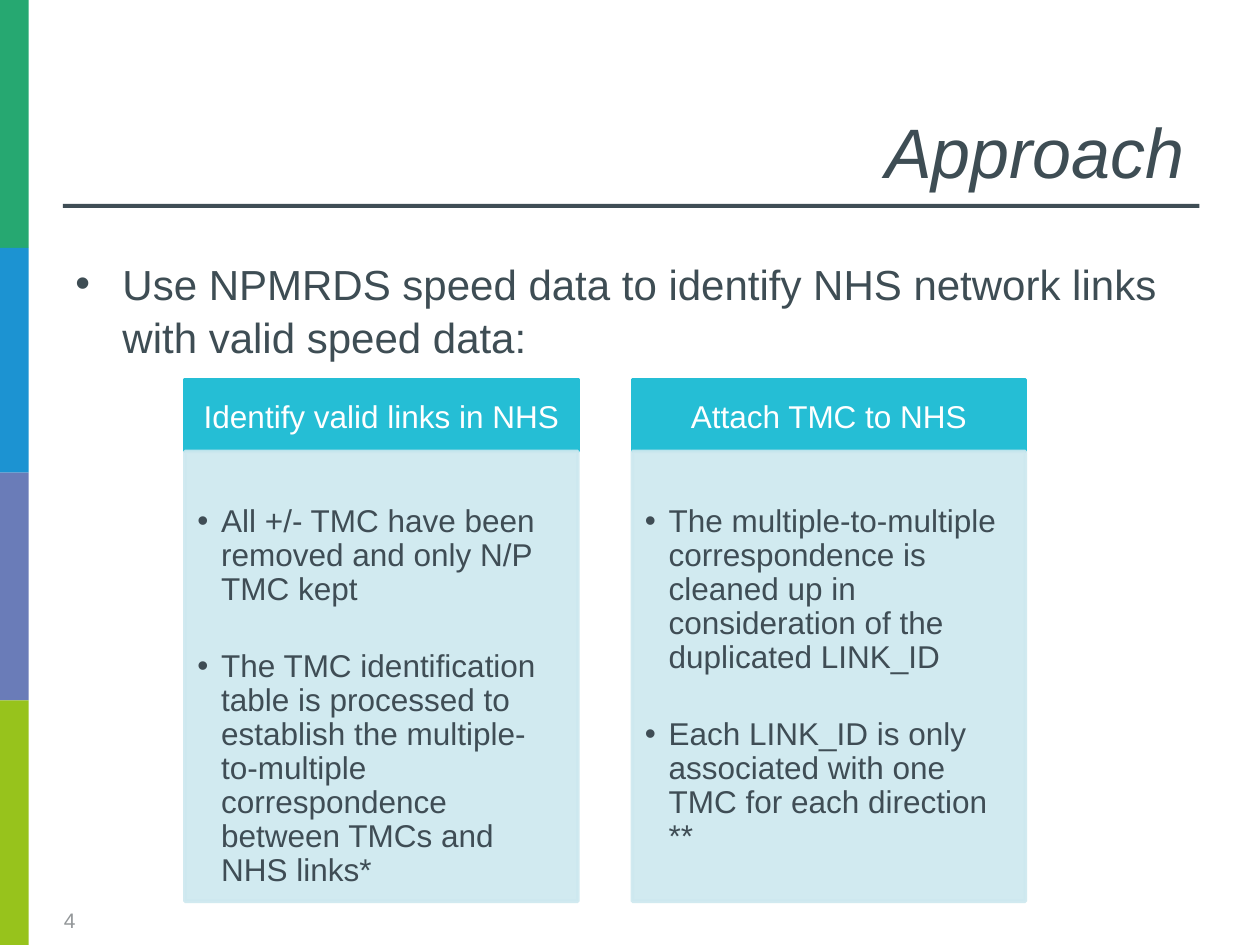
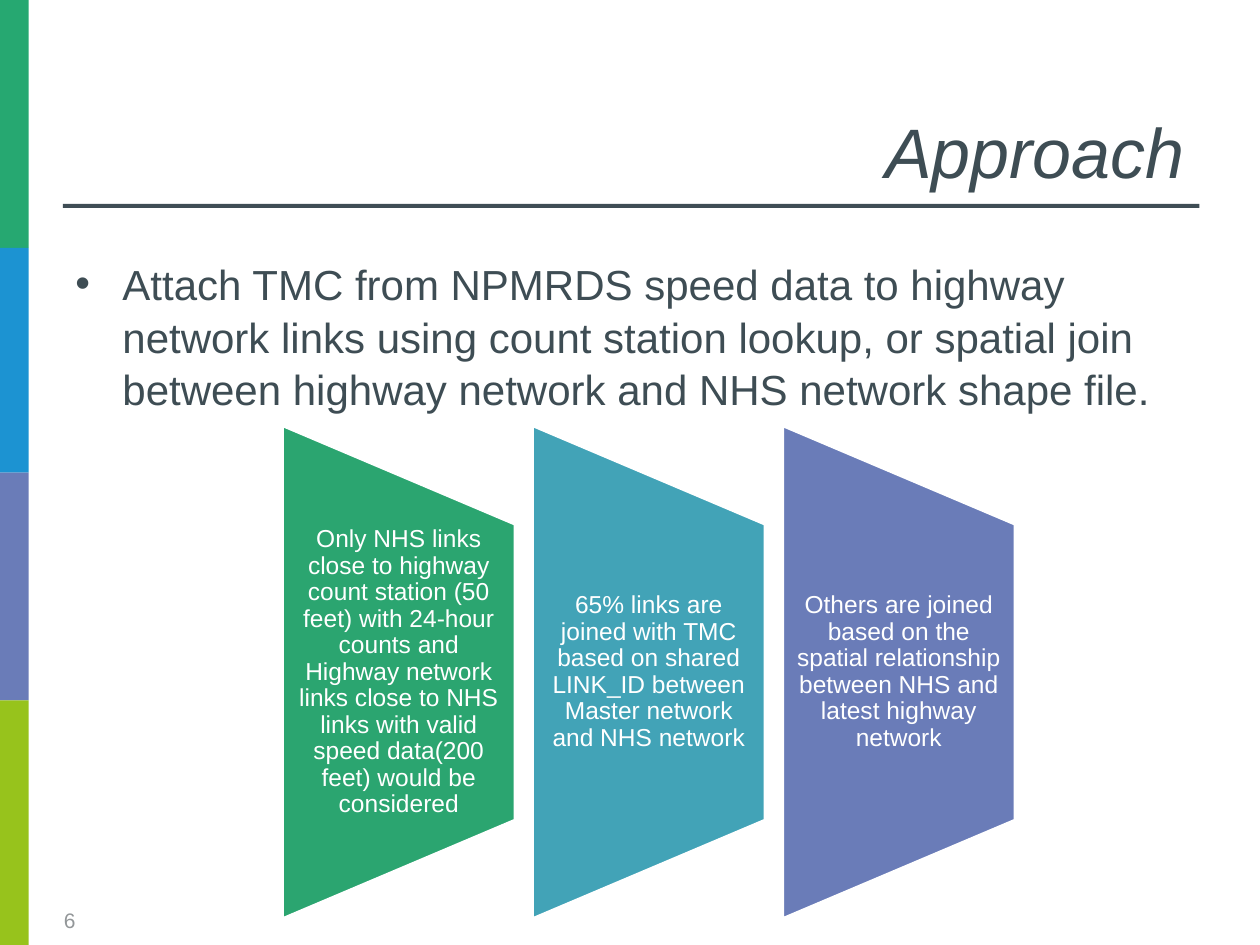
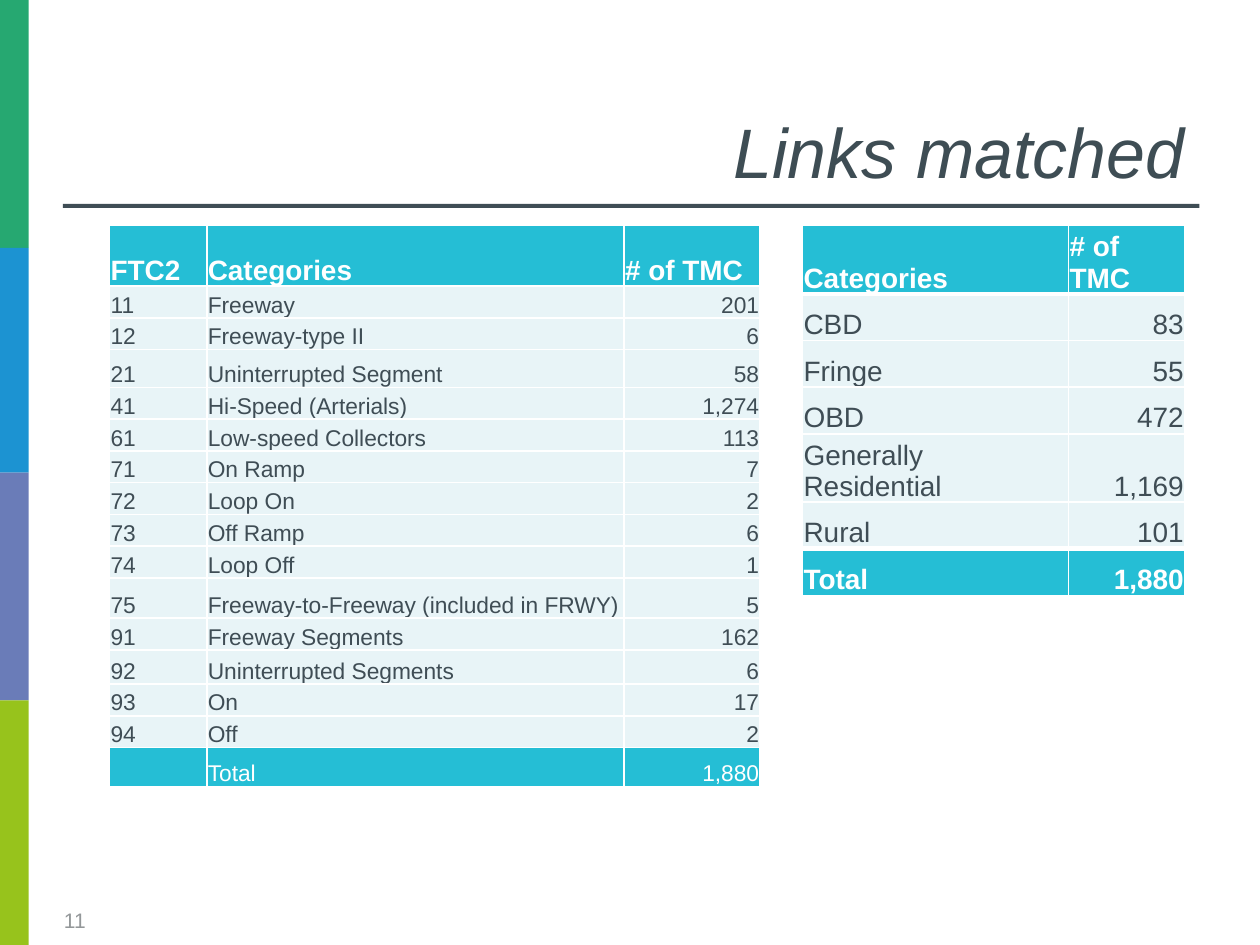
from lxml import etree
from pptx import Presentation
from pptx.dml.color import RGBColor
from pptx.enum import shapes as sh, text as tx
from pptx.oxml import ns
from pptx.util import Cm, Pt

FONT = "Arial"
INK = RGBColor(0x3F, 0x4D, 0x55)
TITLE = RGBColor(0x3E, 0x4D, 0x54)
GREY = RGBColor(0x93, 0x97, 0x99)
WHITE = RGBColor(0xFF, 0xFF, 0xFF)
CYAN = RGBColor(0x25, 0xBE, 0xD5)
PALE = RGBColor(0xCD, 0xE8, 0xEF)
ROW = RGBColor(0xE8, 0xF4, 0xF7)
VIOLET = RGBColor(0x6A, 0x7C, 0xB8)
BANDS = [(RGBColor(0x26, 0xA8, 0x71), 5), (RGBColor(0x1C, 0x93, 0xD2), 4.53),
         (VIOLET, 4.59), (RGBColor(0x97, 0xC3, 0x1C), 4.93)]
FUNNELS = [RGBColor(0x2B, 0xA5, 0x70), RGBColor(0x42, 0xA3, 0xB7), VIOLET]
RECT = sh.MSO_SHAPE.RECTANGLE
LEFT, MID, RIGHT = tx.PP_ALIGN.LEFT, tx.PP_ALIGN.CENTER, tx.PP_ALIGN.RIGHT


def cm(box):
    return [Cm(n) for n in box]


def sub(node, tag, **attrs):
    return etree.SubElement(node, ns.qn(tag), attrs)


def style(para, size, color, align=LEFT, bold=False, italic=False):
    para.alignment = align
    for run in para.runs:
        font = run.font
        font.name, font.size, font.bold, font.italic = FONT, Pt(size), bold, italic
        font.color.rgb = color


def bullet(para, indent):
    props = para._p.get_or_add_pPr()
    props.set("marL", str(Cm(indent)))
    props.set("indent", str(-Cm(indent)))
    sub(props, "a:buFont", typeface=FONT)
    sub(props, "a:buChar", char="•")


def inset(frame, left, top, right, bottom):
    frame.margin_left, frame.margin_top = Cm(left), Cm(top)
    frame.margin_right, frame.margin_bottom = Cm(right), Cm(bottom)


def block(slide, box, fill, kind=RECT, line=None):
    shape = slide.shapes.add_shape(kind, *cm(box))
    shape.shadow.inherit = False
    shape.fill.solid()
    shape.fill.fore_color.rgb = fill
    if line is None:
        shape.line.fill.background()
    else:
        shape.line.color.rgb = line
        shape.line.width = Pt(2)
    return shape


def label(slide, box, words, anchor=tx.MSO_ANCHOR.TOP):
    frame = slide.shapes.add_textbox(*cm(box)).text_frame
    frame.word_wrap = True
    frame.vertical_anchor = anchor
    frame.text = words
    return frame


def base(deck, title, page):
    """Add a slide with the side bands, title, rule and page number."""
    slide = deck.slides.add_slide(deck.slide_layouts[5])
    top = 0
    for color, height in BANDS:
        block(slide, (0, top, 0.58, height), color)
        top += height
    block(slide, (1.27, 4.11, 22.91, 0.08), INK)
    head = slide.shapes.title
    head.left, head.top, head.width, head.height = cm((1.27, 0, 22.86, 4.01))
    frame = head.text_frame
    frame.text = title
    frame.vertical_anchor = tx.MSO_ANCHOR.BOTTOM
    style(frame.paragraphs[0], 40, TITLE, RIGHT, italic=True)
    foot = label(slide, (1.04, 18.03, 1.85, 1.02), str(page), tx.MSO_ANCHOR.MIDDLE)
    style(foot.paragraphs[0], 12, GREY)
    return slide


def lead(slide, words):
    """Add the large bulleted statement below the rule."""
    para = label(slide, (1.27, 5.03, 22.86, 3.5), words).paragraphs[0]
    bullet(para, 0.95)
    para.line_spacing = 1.05
    style(para, 24, TITLE)


def panel(slide, box, title, points):
    """Add a headed panel with a bulleted list."""
    left, top, width, height = box
    bar = 1.45
    frame = block(slide, (left, top, width, bar), CYAN, line=CYAN).text_frame
    inset(frame, 0.36, 0.2, 0.36, 0.2)
    frame.word_wrap = True
    frame.text = title
    style(frame.paragraphs[0], 18, WHITE, MID)

    body = block(slide, (left, top + bar, width, height - bar), PALE, line=PALE)
    for color in body._element.spPr.iter(ns.qn("a:srgbClr")):
        sub(color, "a:alpha", val="90000")
    frame = body.text_frame
    inset(frame, 0.25, 1.09, 0.36, 0.1)
    frame.word_wrap = True
    frame.vertical_anchor = tx.MSO_ANCHOR.TOP
    frame.text = "\n".join(points)
    for i, para in enumerate(frame.paragraphs):
        bullet(para, 0.48)
        para.line_spacing = 0.9
        if i:
            para.space_before = Pt(24.5)
        style(para, 18, INK)


def funnel(slide, box, fill, words):
    """Add a trapezoid narrowing to the right, with upright text."""
    left, top, width, height = box
    shift = (height - width) / 2
    shape = block(slide, (left - shift, top + shift, height, width), fill,
                  sh.MSO_SHAPE.FLOWCHART_MANUAL_OPERATION, WHITE)
    shape.rotation = 270
    frame = label(slide, (left, top + height / 5, width, height * 0.6), words,
                  tx.MSO_ANCHOR.MIDDLE)
    inset(frame, 0.25, 0, 0.25, 0)
    para = frame.paragraphs[0]
    para.line_spacing = 0.9
    style(para, 14, WHITE, MID)


def border(cell, top, bottom):
    props = cell._tc.get_or_add_tcPr()
    for side, width in zip("LRTB", (1, 1, top, bottom)):
        line = sub(props, f"a:ln{side}", w=str(Pt(width)))
        sub(sub(line, "a:solidFill"), "a:srgbClr", val=str(WHITE))


def grid(slide, spot, cols, heights, rows, size, strong):
    """Add a table; strong gives a bold total row and thick inner rules."""
    last = len(rows) - 1
    box = (*spot, sum(cols), sum(heights))
    table = slide.shapes.add_table(len(rows), len(cols), *cm(box)).table
    for col, width in zip(table.columns, cols):
        col.width = Cm(width)
    thick = 3 if strong else 1
    for r, row in enumerate(rows):
        table.rows[r].height = Cm(heights[r])
        band = r in (0, last)
        for c, words in enumerate(row):
            cell = table.cell(r, c)
            border(cell, thick if r in (1, last) else 1,
                   thick if r in (0, last - 1) else 1)
            cell.fill.solid()
            cell.fill.fore_color.rgb = CYAN if band else ROW
            cell.vertical_anchor = tx.MSO_ANCHOR.BOTTOM
            inset(cell, 0.02, 0.02, 0.02, 0)
            para = cell.text_frame.paragraphs[0]
            para.add_run().text = words
            style(para, size if r else 16, WHITE if band else INK,
                  RIGHT if r and c == len(cols) - 1 else LEFT,
                  bold=r == 0 or (strong and r == last))


PANELS = [
    ("Identify valid links in NHS",
     ["All +/- TMC have been removed and only N/P TMC kept",
      "The TMC identification table is processed to establish the "
      "multiple-to-multiple correspondence between TMCs and NHS links*"]),
    ("Attach TMC to NHS",
     ["The multiple-to-multiple correspondence is cleaned up in "
      "consideration of the duplicated LINK_ID",
      "Each LINK_ID is only associated with one TMC for each direction **"]),
]
STEPS = [
    "Only NHS links close to highway count station (50 feet) with 24-hour counts "
    "and Highway network links close to NHS links with valid speed data(200 feet) "
    "would be considered",
    "65% links are joined with TMC based on shared LINK_ID between Master network "
    "and NHS network",
    "Others are joined based on the spatial relationship between NHS and latest "
    "highway network",
]
AREAS = [
    ("Categories", "# of TMC"), ("CBD", "83"), ("Fringe", "55"), ("OBD", "472"),
    ("Generally Residential", "1,169"), ("Rural", "101"), ("Total", "1,880"),
]
TYPES = [
    ("FTC2", "Categories", "# of TMC"),
    ("11", "Freeway", "201"),
    ("12", "Freeway-type II", "6"),
    ("21", "Uninterrupted Segment", "58"),
    ("41", "Hi-Speed (Arterials)", "1,274"),
    ("61", "Low-speed Collectors", "113"),
    ("71", "On Ramp", "7"),
    ("72", "Loop On", "2"),
    ("73", "Off Ramp", "6"),
    ("74", "Loop Off", "1"),
    ("75", "Freeway-to-Freeway (included in FRWY)", "5"),
    ("91", "Freeway Segments", "162"),
    ("92", "Uninterrupted Segments", "6"),
    ("93", "On", "17"),
    ("94", "Off", "2"),
    ("", "Total", "1,880"),
]


def main():
    deck = Presentation()
    deck.slide_width, deck.slide_height = Cm(25.4), Cm(19.05)

    slide = base(deck, "Approach", 4)
    lead(slide, "Use NPMRDS speed data to identify NHS network links with valid "
                "speed data:")
    for i, (title, points) in enumerate(PANELS):
        panel(slide, (3.73 + i * 9.02, 7.65, 7.92, 10.52), title, points)

    slide = base(deck, "Approach", 6)
    lead(slide, "Attach TMC from NPMRDS speed data to highway network links using "
                "count station lookup, or spatial join between highway network and "
                "NHS network shape file.")
    for i, (fill, words) in enumerate(zip(FUNNELS, STEPS)):
        funnel(slide, (5.69 + i * 5.04, 8.57, 4.7, 9.96), fill, words)

    slide = base(deck, "Links matched", 11)
    tall = {0: 1.22, 3: 0.76, 10: 0.81, 12: 0.69}
    grid(slide, (16.18, 4.55), (5.36, 2.34),
         [1.12 if r in (0, 4) else 0.94 for r in range(len(AREAS))], AREAS, 16, True)
    grid(slide, (2.21, 4.55), (1.96, 8.41, 2.74),
         [tall.get(r, 0.64) for r in range(len(TYPES))], TYPES, 13, False)

    deck.save("out.pptx")


if __name__ == "__main__":
    main()
